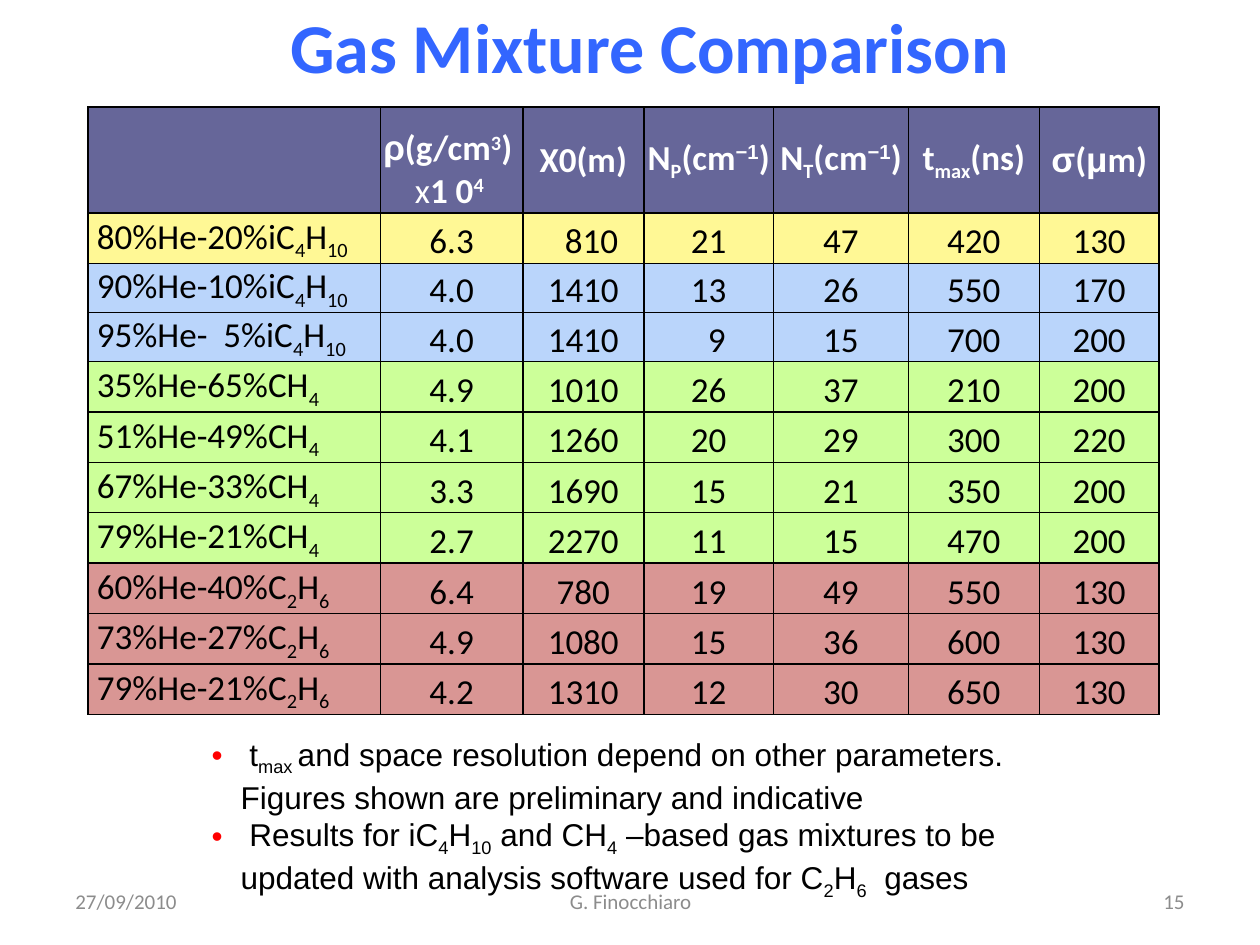
from pptx import Presentation
from pptx.dml.color import RGBColor
from pptx.enum.text import MSO_ANCHOR as Anchor, MSO_AUTO_SIZE as AutoSize, PP_ALIGN as Align
from pptx.oxml import parse_xml
from pptx.oxml.ns import nsdecls
from pptx.util import Inches, Pt

# Content: pieces between bars start with a mark
# _ subscript, ^ superscript, @ Arial symbol, ! Arial superscript, ~ not bold
TITLE = "Gas Mixture Comparison"
HEADERS = [
    [],
    ["|@ρ|(g/cm|^3|) ", "|~x|1 0|^4 |"],
    ["X0(m)"],
    ["N|_P|(cm|!−1|)"],
    ["N|_T|(cm|!−1|)"],
    ["t|_max|(ns)"],
    ["|@σ|(|@μ|m)"],
]
ISOBUTANE, METHANE, ETHANE = "iC|_4|H|_10|", "CH|_4|", "C|_2|H|_6|"
YELLOW, BLUE, GREEN, RED = "FFF895", "BAD5FB", "CCFF99", "D99694"
MIXTURES = [
    ("80%He-20%" + ISOBUTANE, YELLOW, ["6.3", "810", "21", "47", "420", "130"]),
    ("90%He-10%" + ISOBUTANE, BLUE, ["4.0", "1410", "13", "26", "550", "170"]),
    ("95%He-  5%" + ISOBUTANE, BLUE, ["4.0", "1410", "9", "15", "700", "200"]),
    ("35%He-65%" + METHANE, GREEN, ["4.9", "1010", "26", "37", "210", "200"]),
    ("51%He-49%" + METHANE, GREEN, ["4.1", "1260", "20", "29", "300", "220"]),
    ("67%He-33%" + METHANE, GREEN, ["3.3", "1690", "15", "21", "350", "200"]),
    ("79%He-21%" + METHANE, GREEN, ["2.7", "2270", "11", "15", "470", "200"]),
    ("60%He-40%" + ETHANE, RED, ["6.4", "780", "19", "49", "550", "130"]),
    ("73%He-27%" + ETHANE, RED, ["4.9", "1080", "15", "36", "600", "130"]),
    ("79%He-21%" + ETHANE, RED, ["4.2", "1310", "12", "30", "650", "130"]),
]
RIGHT_SHIFTED = {"810", "9"}
NOTES = [
    " t|_max |and space resolution depend on other parameters. "
    "Figures shown are preliminary and indicative",
    f" Results for {ISOBUTANE} and {METHANE} –based gas mixtures to be updated "
    f"with analysis software used for {ETHANE}  gases",
]
FOOTERS = [
    ("27/09/2010", 0.5, 2.33, Align.LEFT),
    ("G. Finocchiaro", 3.42, 3.17, Align.CENTER),
    ("15", 7.17, 2.33, Align.RIGHT),
]
COLUMNS = [2.32, 1.13, 0.96, 1.03, 1.07, 1.04, 0.95]
ROWS = [0.84, 0.4, 0.39, 0.39] + [0.4] * 7
BASELINES = {"_": "-25000", "^": "30000", "!": "30000"}


def color(hex_code):
    return RGBColor.from_string(hex_code)


def write(para, text, size, hex_code, font="Calibri", bold=False, align=Align.LEFT):
    para.alignment = align
    para.font.size, para.font.bold = Pt(size), bold
    para.font.name, para.font.color.rgb = font, color(hex_code)
    for index, piece in enumerate(text.split("|")):
        if not piece:
            continue
        mark, words = (piece[0], piece[1:]) if index % 2 else ("", piece)
        span = para.add_run()
        span.text = words
        span.font.size, span.font.bold = Pt(size), bold and mark != "~"
        span.font.name = "Arial" if mark in ("@", "!") else font
        span.font.color.rgb = color(hex_code)
        if mark in BASELINES:
            span._r.get_or_add_rPr().set("baseline", BASELINES[mark])


def place(shape, left, top, width, height):
    shape.left, shape.top = Inches(left), Inches(top)
    shape.width, shape.height = Inches(width), Inches(height)


def format_cell(cell, fill, anchor, left=0.01):
    cell.margin_left, cell.margin_right = Inches(left), Inches(0.01)
    cell.margin_top, cell.margin_bottom = Inches(0.01), 0
    cell.vertical_anchor = anchor
    properties = cell._tc.get_or_add_tcPr()
    for side in ("lnL", "lnR", "lnT", "lnB"):
        properties.append(parse_xml(
            f'<a:{side} {nsdecls("a")} w="12700"><a:solidFill>'
            f'<a:srgbClr val="000000"/></a:solidFill></a:{side}>'))
    cell.fill.solid()
    cell.fill.fore_color.rgb = color(fill)


def add_bullet(para, hex_code, indent):
    properties = para._p.get_or_add_pPr()
    properties.set("marL", str(Inches(indent)))
    properties.set("indent", str(-Inches(indent)))
    for xml in (f'<a:buClr {nsdecls("a")}><a:srgbClr val="{hex_code}"/></a:buClr>',
                f'<a:buFont {nsdecls("a")} typeface="Arial"/>',
                f'<a:buChar {nsdecls("a")} char="•"/>'):
        properties.insert_element_before(parse_xml(xml), "a:tabLst", "a:defRPr", "a:extLst")


deck = Presentation()
deck.slide_width, deck.slide_height = Inches(10), Inches(7.5)
page = deck.slides.add_slide(deck.slide_layouts[1])

# Title
title = page.shapes.title
place(title, 1.44, 0.09, 7.43, 0.54)
title.text_frame.auto_size = AutoSize.NONE
title.text_frame.vertical_anchor = Anchor.MIDDLE
write(title.text_frame.paragraphs[0], TITLE, 40, "3366FF", bold=True, align=Align.CENTER)

# Footers
for text, left, width, align in FOOTERS:
    box = page.shapes.add_textbox(Inches(left), Inches(6.95), Inches(width), Inches(0.4))
    box.text_frame.word_wrap = True
    box.text_frame.vertical_anchor = Anchor.MIDDLE
    write(box.text_frame.paragraphs[0], text, 12, "8C8C8C", align=align)

# Table
table = page.shapes.add_table(
    len(ROWS), len(COLUMNS), Inches(0.7), Inches(0.85),
    Inches(sum(COLUMNS)), Inches(sum(ROWS))).table
for column, width in zip(table.columns, COLUMNS):
    column.width = Inches(width)
for row, height in zip(table.rows, ROWS):
    row.height = Inches(height)

for index, lines in enumerate(HEADERS):
    cell = table.cell(0, index)
    format_cell(cell, "666699", Anchor.BOTTOM if len(lines) > 1 else Anchor.MIDDLE)
    frame = cell.text_frame
    for number, line in enumerate(lines):
        para = frame.add_paragraph() if number else frame.paragraphs[0]
        write(para, line, 20, "FFFFFF", bold=True, align=Align.CENTER)

for row, (mixture, fill, values) in enumerate(MIXTURES, start=1):
    for index, text in enumerate([mixture] + values):
        cell = table.cell(row, index)
        left = 0.07 if index == 0 else 0.14 if text in RIGHT_SHIFTED else 0.01
        format_cell(cell, fill, Anchor.BOTTOM, left)
        write(cell.text_frame.paragraphs[0], text, 20, "000000",
              align=Align.CENTER if index else Align.LEFT)

# Notes
body = page.placeholders[1]
place(body, 1.58, 5.78, 7, 1.31)
frame = body.text_frame
frame.auto_size = AutoSize.NONE
for number, note in enumerate(NOTES):
    para = frame.add_paragraph() if number else frame.paragraphs[0]
    para.space_before = Pt(0)
    write(para, note, 18, "000000", font="Arial")
    add_bullet(para, "FF0000", 0.23)

deck.save("out.pptx")
